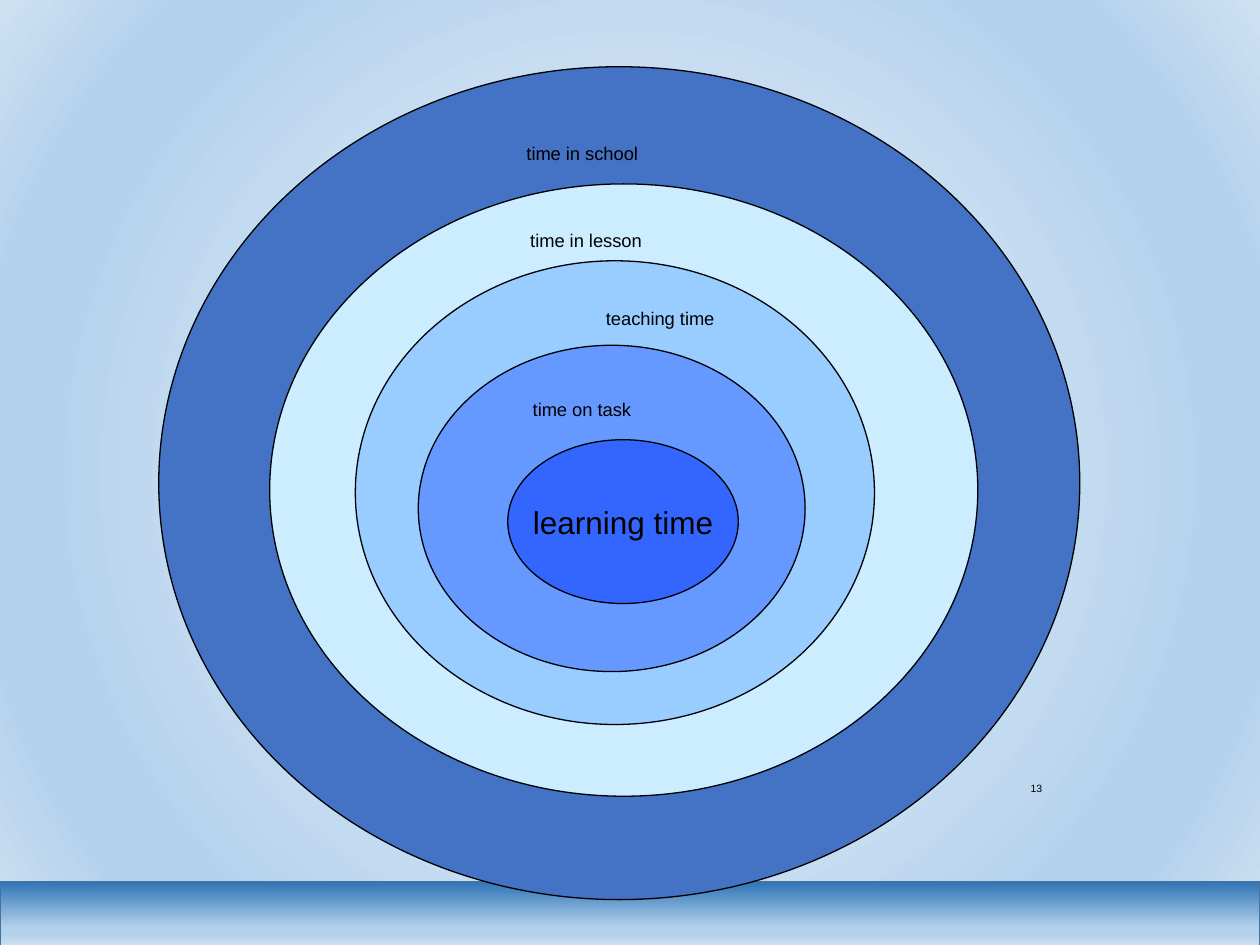
from lxml import etree
from pptx import Presentation
from pptx.dml.color import RGBColor
from pptx.enum import shapes, text
from pptx.oxml.ns import qn
from pptx.util import Inches, Pt

BLACK = RGBColor(0x00, 0x00, 0x00)
BAND_EDGE = RGBColor(0x43, 0x73, 0x9E)
FONT = "Arial"
LEFT, RIGHT, CENTER = text.PP_ALIGN.LEFT, text.PP_ALIGN.RIGHT, text.PP_ALIGN.CENTER

# Content: rings from outside to inside (left, top, width, height)
RINGS = [
    (RGBColor(0x44, 0x72, 0xC4), (1.26, 0.53, 7.31, 6.61)),
    (RGBColor(0xCC, 0xEC, 0xFF), (2.14, 1.46, 5.62, 4.86)),
    (RGBColor(0x99, 0xCC, 0xFF), (2.82, 2.07, 4.12, 3.68)),
    (RGBColor(0x66, 0x99, 0xFF), (3.32, 2.74, 3.07, 2.59)),
    (RGBColor(0x33, 0x66, 0xFF), (4.03, 3.49, 1.83, 1.3)),
]
LABELS = [
    ("time in school", (4.08, 0.93, 2.01, 0.4), LEFT),
    ("time in lesson", (4.11, 1.62, 1.98, 0.4), LEFT),
    ("teaching time", (4.07, 2.24, 1.7, 0.4), RIGHT),
    ("time on task", (4.13, 2.96, 1.64, 0.4), LEFT),
]
CORE_LABEL = "learning time"
PAGE_NUMBER = ("13", (6.62, 6.06, 1.75, 0.39))

# Gradient stops: (percent, colour)
BACKDROP_STOPS = [(0, "F7FAFD"), (74, "B5D2EC"), (83, "B5D2EC"), (100, "CEE1F2")]
BAND_STOPS = [(0, "2E75B6"), (72, "B5D2EC"), (83, "B5D2EC"), (100, "CEE1F2")]


def set_gradient(owner, stops, circular=False):
    gradient = owner.xpath(".//a:gradFill")[0]
    for child in list(gradient):
        gradient.remove(child)
    stop_list = etree.SubElement(gradient, qn("a:gsLst"))
    for percent, colour in stops:
        stop = etree.SubElement(stop_list, qn("a:gs"), pos=str(percent * 1000))
        etree.SubElement(stop, qn("a:srgbClr"), val=colour)
    if circular:
        path = etree.SubElement(gradient, qn("a:path"), path="circle")
        etree.SubElement(path, qn("a:fillToRect"), {side: "50000" for side in "ltrb"})
    else:
        etree.SubElement(gradient, qn("a:lin"), ang="5400000", scaled="0")


def add_outlined(slide, kind, box, edge, width):
    shape = slide.shapes.add_shape(kind, *map(Inches, box))
    shape.shadow.inherit = False
    shape.line.color.rgb = edge
    shape.line.width = Pt(width)
    return shape


def write(frame, words, size, align, anchor):
    frame.vertical_anchor = anchor
    paragraph = frame.paragraphs[0]
    paragraph.alignment = align
    run = paragraph.add_run()
    run.text = words
    run.font.name = FONT
    run.font.size = Pt(size)
    run.font.color.rgb = BLACK


def main():
    deck = Presentation()
    deck.slide_width, deck.slide_height = Inches(10), Inches(7.5)
    slide = deck.slides.add_slide(deck.slide_layouts[6])

    # Backdrop and bottom band
    slide.background.fill.gradient()
    set_gradient(slide.background._cSld, BACKDROP_STOPS, circular=True)
    band = add_outlined(slide, shapes.MSO_SHAPE.RECTANGLE, (0, 7, 10, 0.51), BAND_EDGE, 1)
    band.fill.gradient()
    set_gradient(band._element, BAND_STOPS)

    # Nested rings
    for colour, box in RINGS:
        ring = add_outlined(slide, shapes.MSO_SHAPE.OVAL, box, BLACK, 0.75)
        ring.fill.solid()
        ring.fill.fore_color.rgb = colour
    ring.text_frame.word_wrap = False
    write(ring.text_frame, CORE_LABEL, 18, CENTER, text.MSO_ANCHOR.MIDDLE)

    # Ring labels sit low in their boxes
    for words, box, align in LABELS:
        frame = slide.shapes.add_textbox(*map(Inches, box)).text_frame
        frame.word_wrap = True
        frame.margin_top, frame.margin_bottom = Inches(0.22), 0
        write(frame, words, 10.5, align, text.MSO_ANCHOR.TOP)

    # Page number
    number, box = PAGE_NUMBER
    frame = slide.shapes.add_textbox(*map(Inches, box)).text_frame
    frame.word_wrap = True
    write(frame, number, 6, RIGHT, text.MSO_ANCHOR.MIDDLE)

    deck.save("out.pptx")


if __name__ == "__main__":
    main()
